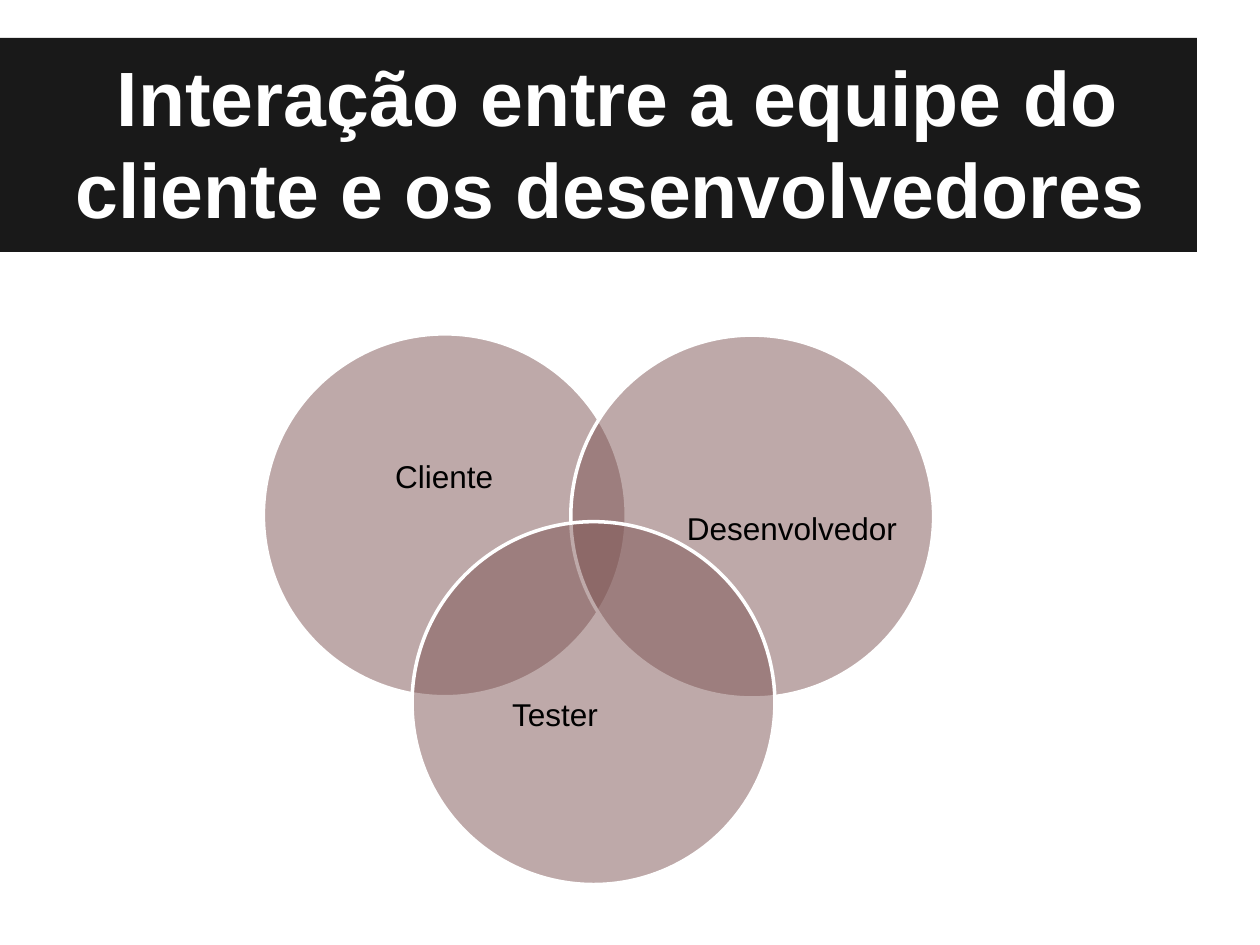
import pptx
import pptx.dml.color
import pptx.enum.shapes
import pptx.enum.text
import pptx.oxml
import pptx.oxml.ns
import pptx.util
from pptx.util import Inches

COLORS = {"band": "191919", "circle": "7E5554", "white": "FFFFFF", "black": "000000"}
DIAMETER = 2.88

# label, circle (left, top), label box (left, top, width, height)
ROLES = [
    ("Cliente", (2.09, 2.65), (2.47, 3.15, 2.11, 1.3)),
    ("Desenvolvedor", (4.53, 2.66), (5.42, 3.41, 1.73, 1.59)),
    ("Tester", (3.27, 4.14), (3.54, 4.89, 1.73, 1.59)),
]


class SlideBuilder:
    font = "Arial"

    def __init__(self, slide):
        self.slide = slide

    def color(self, name):
        return pptx.dml.color.RGBColor.from_string(COLORS[name])

    def shape(self, kind, box, fill):
        shape = self.slide.shapes.add_shape(kind, *map(Inches, box))
        shape.shadow.inherit = False
        shape.fill.solid()
        shape.fill.fore_color.rgb = self.color(fill)
        shape.line.fill.background()
        return shape

    def band(self, box):
        self.shape(pptx.enum.shapes.MSO_SHAPE.RECTANGLE, box, "band")

    def circle(self, left, top):
        """Add a half-transparent circle with a white outline."""
        box = (left, top, DIAMETER, DIAMETER)
        shape = self.shape(pptx.enum.shapes.MSO_SHAPE.OVAL, box, "circle")
        shape.line.color.rgb = self.color("white")
        shape.line.width = pptx.util.Pt(2)
        fill_color = shape.fill._xPr.find(".//" + pptx.oxml.ns.qn("a:srgbClr"))
        alpha = pptx.oxml.parse_xml(
            f'<a:alpha {pptx.oxml.ns.nsdecls("a")} val="50000"/>')
        fill_color.append(alpha)

    def text(self, box, words, size, color, anchor, margin=0, bold=False):
        frame = self.slide.shapes.add_textbox(*map(Inches, box)).text_frame
        frame.word_wrap = True
        frame.vertical_anchor = anchor
        frame.margin_left = frame.margin_right = Inches(margin)
        frame.margin_top = frame.margin_bottom = Inches(margin)
        paragraph = frame.paragraphs[0]
        run = paragraph.add_run()
        run.text = words
        run.font.name = self.font
        run.font.size = pptx.util.Pt(size)
        run.font.bold = bold
        run.font.color.rgb = self.color(color)
        return paragraph

    def title(self, box, words):
        paragraph = self.text(box, words, 44, "white",
                              pptx.enum.text.MSO_ANCHOR.BOTTOM, margin=0.1, bold=True)
        properties = paragraph._p.get_or_add_pPr()
        properties.set("marL", "0")
        properties.set("indent", str(Inches(0.33)))

    def label(self, box, words):
        paragraph = self.text(box, words, 18, "black", pptx.enum.text.MSO_ANCHOR.MIDDLE)
        paragraph.alignment = pptx.enum.text.PP_ALIGN.CENTER
        paragraph.line_spacing = 0.9


def main():
    presentation = pptx.Presentation()
    presentation.slide_width = Inches(10)
    presentation.slide_height = Inches(7.5)
    slide = presentation.slides.add_slide(presentation.slide_layouts[6])
    builder = SlideBuilder(slide)
    builder.band((0, 0.3, 9.5, 1.7))
    builder.title((0.5, 0.3, 9, 1.66),
                  "Interação entre a equipe do cliente e os desenvolvedores")
    for name, position, label_box in ROLES:
        builder.circle(*position)
        builder.label(label_box, name)
    presentation.save("out.pptx")


if __name__ == "__main__":
    main()
